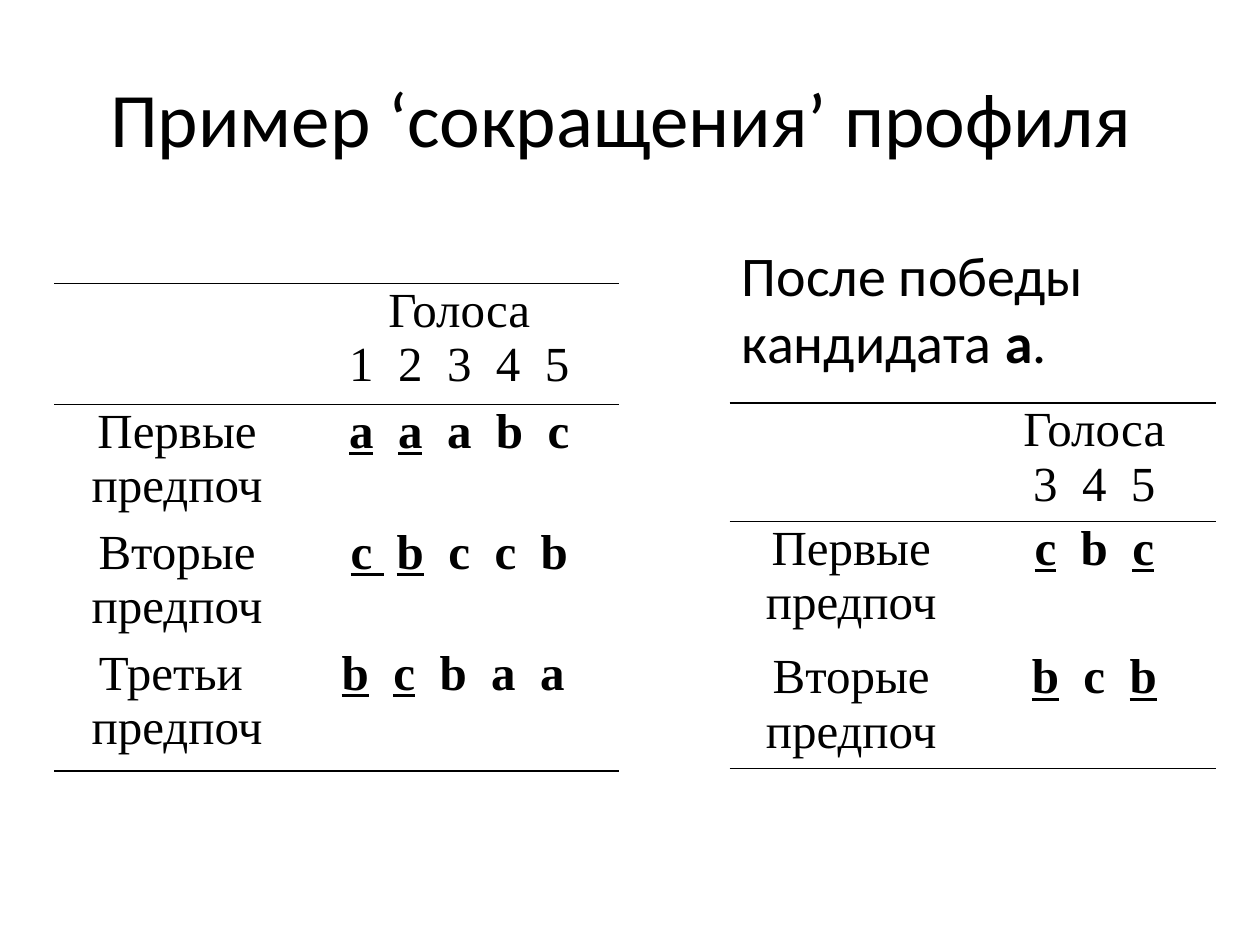
from dataclasses import dataclass

from lxml.etree import SubElement
from pptx import Presentation
from pptx.dml.color import RGBColor
from pptx.enum.text import MSO_ANCHOR, PP_ALIGN
from pptx.oxml.ns import qn
from pptx.util import Inches, Pt


@dataclass(frozen=True)
class Theme:
    ink: str = "000000"
    text_font: str = "Calibri"
    table_font: str = "Times New Roman"
    title_size: int = 44
    note_size: int = 32
    table_size: int = 28
    rule_width: int = 1


THEME = Theme()

FIRST = ["Первые предпоч"]
SECOND = ["Вторые предпоч"]
THIRD = ["Третьи ", "предпоч"]

FULL_PROFILE = [
    ([], ["Голоса", "1  2  3  4  5"]),
    (FIRST, ["_a_  _a_  a  b  c"]),
    (SECOND, ["_c _ _b_  c  c  b"]),
    (THIRD, ["_b_  _c_  b  a  a "]),
]
REDUCED_PROFILE = [
    ([], ["Голоса", "3  4  5"]),
    (FIRST, ["_c_  b  _c_"]),
    (SECOND, ["_b_  c  _b_"]),
]


def add_run(paragraph, text, font, size, bold=False, underline=False):
    run = paragraph.add_run()
    run.text = text
    run.font.name = font
    run.font.size = Pt(size)
    run.font.bold = bold
    run.font.underline = underline
    run.font.color.rgb = RGBColor.from_string(THEME.ink)


def add_text(slide, box, runs, size, alignment=PP_ALIGN.LEFT, anchor=MSO_ANCHOR.TOP):
    shape = slide.shapes.add_textbox(*map(Inches, box))
    frame = shape.text_frame
    frame.word_wrap = True
    frame.vertical_anchor = anchor
    paragraph = frame.paragraphs[0]
    paragraph.alignment = alignment
    for text, bold in runs:
        add_run(paragraph, text, THEME.text_font, size, bold)


def set_borders(cell, ruled_sides):
    properties = cell._tc.get_or_add_tcPr()
    for index, side in enumerate(("lnL", "lnR", "lnT", "lnB")):
        line = SubElement(properties, qn(f"a:{side}"), w=str(Pt(THEME.rule_width)))
        if side in ruled_sides:
            fill = SubElement(line, qn("a:solidFill"))
            SubElement(fill, qn("a:srgbClr"), val=THEME.ink)
        else:
            SubElement(line, qn("a:noFill"))
        properties.insert(index, line)


def fill_cell(cell, lines, bold):
    cell.fill.background()
    cell.margin_left = cell.margin_right = Inches(0.07)
    cell.margin_top = cell.margin_bottom = 0
    frame = cell.text_frame
    for index, line in enumerate(lines):
        paragraph = frame.add_paragraph() if index else frame.paragraphs[0]
        paragraph.alignment = PP_ALIGN.CENTER
        for position, text in enumerate(line.split("_")):
            if text:
                add_run(paragraph, text, THEME.table_font, THEME.table_size,
                        bold, underline=position % 2 == 1)


def add_profile(slide, left, top, widths, heights, rows):
    frame = slide.shapes.add_table(
        len(rows), len(widths), Inches(left), Inches(top),
        Inches(sum(widths)), Inches(sum(heights)))
    table = frame.table
    table.first_row = False
    table.horz_banding = False
    for column, width in zip(table.columns, widths):
        column.width = Inches(width)
    for row_index, (height, row) in enumerate(zip(heights, rows)):
        table.rows[row_index].height = Inches(height)
        ruled_sides = set()
        if row_index <= 1:
            ruled_sides.add("lnT")
        if row_index in (0, len(rows) - 1):
            ruled_sides.add("lnB")
        for column_index, lines in enumerate(row):
            cell = table.cell(row_index, column_index)
            fill_cell(cell, lines, bold=row_index > 0 and column_index > 0)
            set_borders(cell, ruled_sides)


def main():
    presentation = Presentation()
    presentation.slide_width = Inches(10)
    presentation.slide_height = Inches(7.5)
    slide = presentation.slides.add_slide(presentation.slide_layouts[6])
    add_text(slide, (0.5, 0.3, 9, 1.25), [("Пример ‘сокращения’ профиля ", False)],
             THEME.title_size, PP_ALIGN.CENTER, MSO_ANCHOR.MIDDLE)
    add_profile(slide, 0.43, 2.25, (1.95, 2.53), (0.96, 0.96, 0.96, 0.99), FULL_PROFILE)
    add_profile(slide, 5.79, 3.2, (1.93, 1.93), (0.94, 1.02, 0.94), REDUCED_PROFILE)
    add_text(slide, (5.79, 1.86, 4.21, 1.18),
             [("После победы кандидата ", False), ("а", True), (".", False)],
             THEME.note_size)
    presentation.save("out.pptx")


if __name__ == "__main__":
    main()
